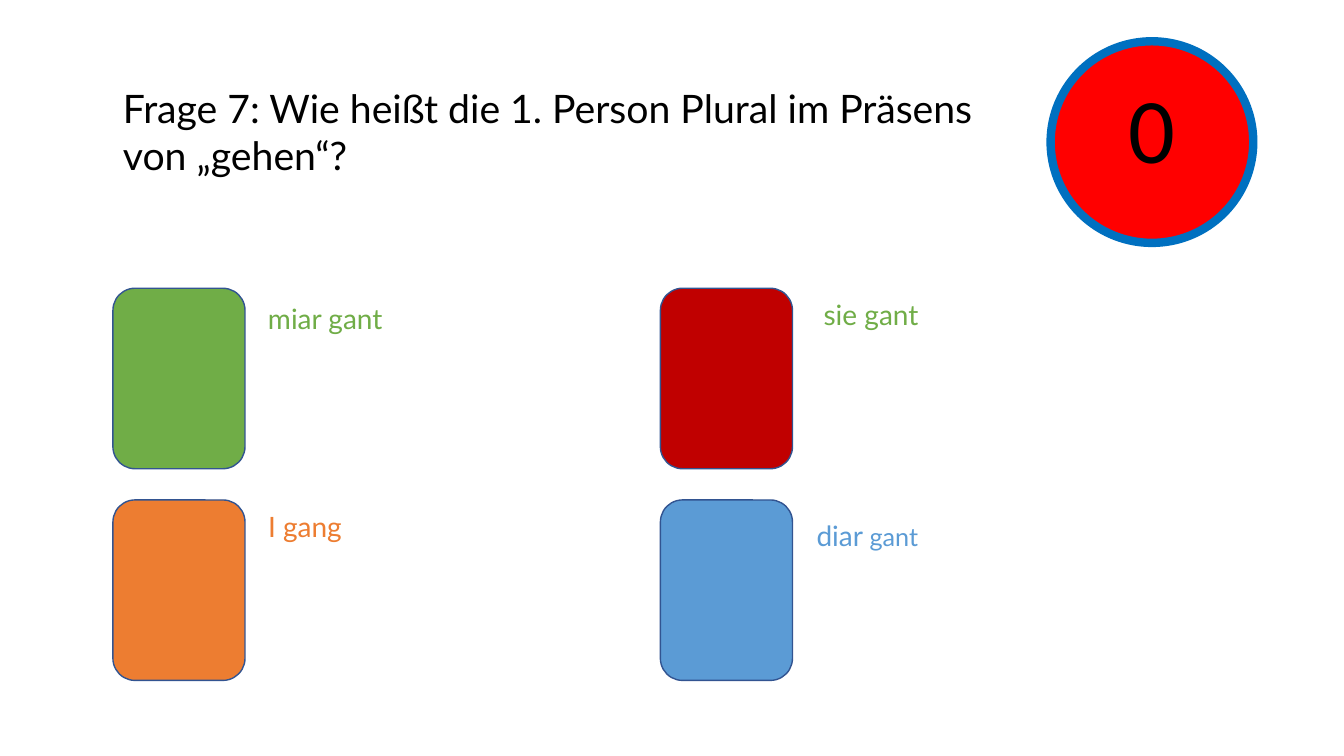
from dataclasses import dataclass

from pptx import Presentation
from pptx.dml.color import RGBColor
from pptx.enum.shapes import MSO_SHAPE
from pptx.enum.text import MSO_ANCHOR, PP_ALIGN
from pptx.util import Inches, Pt

ROUNDED = MSO_SHAPE.ROUNDED_RECTANGLE
OVAL = MSO_SHAPE.OVAL
MIDDLE = MSO_ANCHOR.MIDDLE
CENTER = PP_ALIGN.CENTER


@dataclass(frozen=True)
class Theme:
    font: str = "Lato"
    counter_font: str = "Calibri"
    text: str = "000000"
    green: str = "70AD47"
    orange: str = "ED7D31"
    dark_red: str = "C00000"
    blue: str = "5B9BD5"
    card_line: str = "325491"
    counter_fill: str = "FF0000"
    counter_line: str = "0070C0"
    question_size: int = 28
    answer_size: int = 20
    small_answer_size: int = 18
    counter_size: int = 66


THEME = Theme()
CARD_WIDTH, CARD_HEIGHT = 1.31, 1.79
COLUMN_STEP, ROW_STEP = 5.43, 2.1
LABEL_HEIGHT = 0.44

# column, row, card colour, label colour, label offset (x, y), label width, (text, size) runs
ANSWERS = [
    (0, 0, THEME.green, THEME.green, (1.44, 0.08), 3.07, [("miar gant", THEME.answer_size)]),
    (0, 1, THEME.orange, THEME.orange, (1.44, 0.05), 2.48, [("I gang", THEME.answer_size)]),
    (1, 0, THEME.dark_red, THEME.green, (1.52, 0.04), 2.25, [("sie gant", THEME.answer_size)]),
    (1, 1, THEME.blue, THEME.blue, (1.45, 0.13), 1.31,
     [("diar", THEME.answer_size), (" gant", THEME.small_answer_size)]),
]


def style_run(run, size, color, font=THEME.font):
    run.font.name = font
    run.font.size = Pt(size)
    run.font.color.rgb = RGBColor.from_string(color)


def add_filled_shape(slide, kind, box, fill, line, line_width):
    shape = slide.shapes.add_shape(kind, *map(Inches, box))
    shape.shadow.inherit = False
    shape.fill.solid()
    shape.fill.fore_color.rgb = RGBColor.from_string(fill)
    shape.line.color.rgb = RGBColor.from_string(line)
    shape.line.width = Pt(line_width)
    return shape


def add_text(slide, box, lines, color):
    """Add a text box; each line is a list of (text, size) runs."""
    frame = slide.shapes.add_textbox(*map(Inches, box)).text_frame
    frame.word_wrap = True
    for index, runs in enumerate(lines):
        paragraph = frame.add_paragraph() if index else frame.paragraphs[0]
        for text, size in runs:
            run = paragraph.add_run()
            run.text = text
            style_run(run, size, color)


def add_question(slide, box):
    lines = ["Frage 7: Wie heißt die 1. Person Plural im Präsens", "von „gehen“?"]
    add_text(slide, box, [[(line, THEME.question_size)] for line in lines], THEME.text)


def add_answers(slide, left, top):
    for column, row, fill, color, (dx, dy), width, runs in ANSWERS:
        x, y = left + column * COLUMN_STEP, top + row * ROW_STEP
        add_filled_shape(slide, ROUNDED, (x, y, CARD_WIDTH, CARD_HEIGHT),
                         fill, THEME.card_line, 1)
        add_text(slide, (x + dx, y + dy, width, LABEL_HEIGHT), [runs], color)


def add_counter(slide, box):
    circle = add_filled_shape(slide, OVAL, box, THEME.counter_fill, THEME.counter_line, 6)
    frame = circle.text_frame
    frame.vertical_anchor = MIDDLE
    frame.margin_bottom = Inches(0.35)
    frame.text = "0"
    paragraph = frame.paragraphs[0]
    paragraph.alignment = CENTER
    style_run(paragraph.runs[0], THEME.counter_size, THEME.text, THEME.counter_font)


def main():
    presentation = Presentation()
    presentation.slide_width = Inches(13.33)
    presentation.slide_height = Inches(7.5)
    slide = presentation.slides.add_slide(presentation.slide_layouts[6])
    add_question(slide, (1.12, 0.79, 11.25, 1.04))
    add_answers(slide, 1.12, 2.86)
    add_counter(slide, (10.42, 0.41, 2.01, 2))
    presentation.save("out.pptx")


if __name__ == "__main__":
    main()
